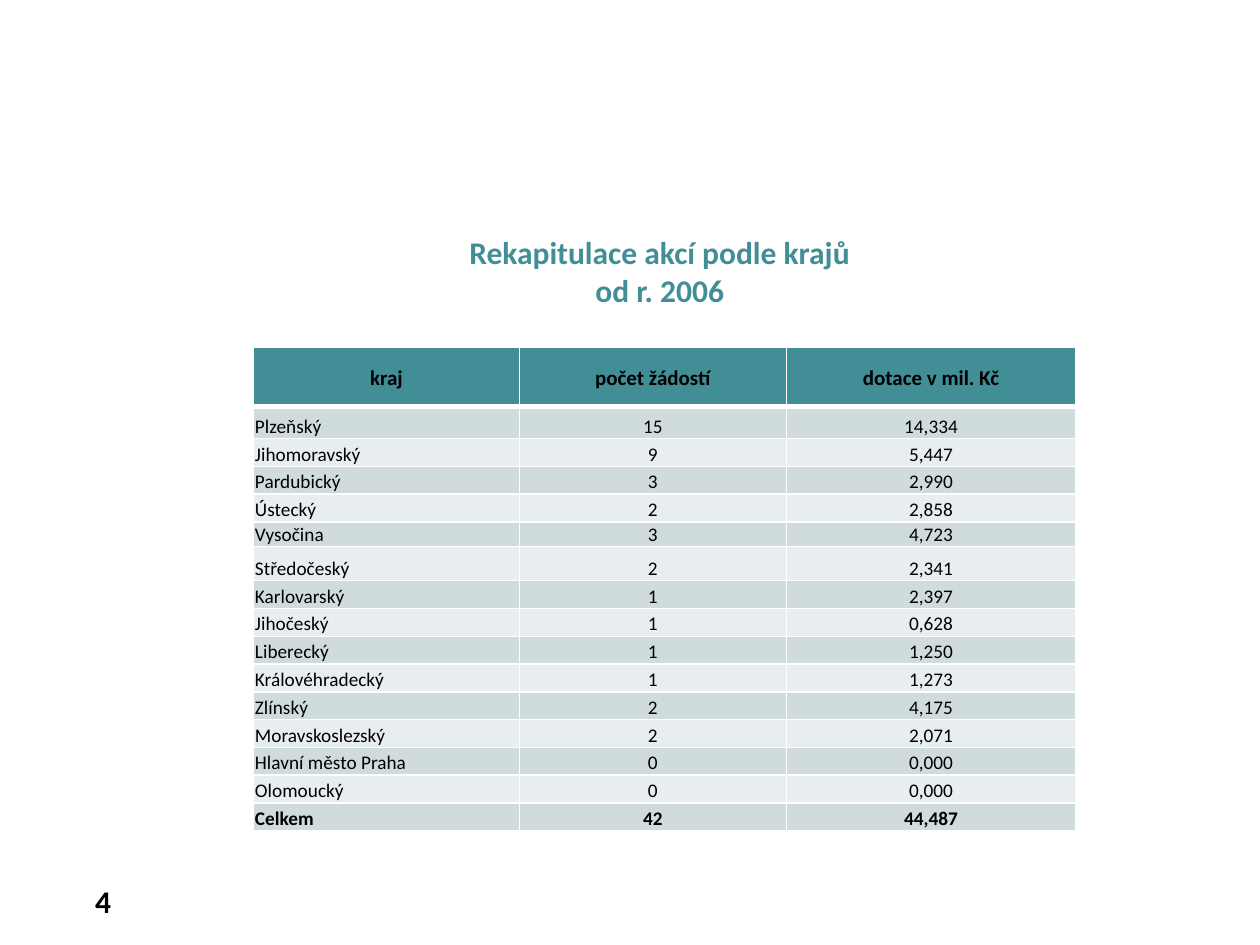
import pptx
import pptx.util
import pptx.dml.color
import pptx.enum.text
import pptx.oxml
import pptx.oxml.ns

Cm, Pt = pptx.util.Cm, pptx.util.Pt
ALIGN = pptx.enum.text.PP_ALIGN
ANCHOR = pptx.enum.text.MSO_ANCHOR
FIT = pptx.enum.text.MSO_AUTO_SIZE

COLORS = {"teal": "418E96", "dark": "CFDBDD", "light": "E8EEEF",
          "text": "000000", "line": "FFFFFF"}
TITLE = ["Rekapitulace akcí podle krajů", "od r. 2006"]
HEAD = ["kraj", "počet žádostí", "dotace v mil. Kč"]
REGIONS = [
    ["Plzeňský", "15", "14,334"],
    ["Jihomoravský", "9", "5,447"],
    ["Pardubický", "3", "2,990"],
    ["Ústecký", "2", "2,858"],
    ["Vysočina", "3", "4,723"],
    ["Středočeský", "2", "2,341"],
    ["Karlovarský", "1", "2,397"],
    ["Jihočeský", "1", "0,628"],
    ["Liberecký", "1", "1,250"],
    ["Královéhradecký", "1", "1,273"],
    ["Zlínský", "2", "4,175"],
    ["Moravskoslezský", "2", "2,071"],
    ["Hlavní město Praha", "0", "0,000"],
    ["Olomoucký", "0", "0,000"],
]
TOTAL = ["Celkem", "42", "44,487"]
WIDTHS = [5.36, 5.38, 5.84]
HEIGHT = 0.56
ODD = {0: 1.19, 1: 0.64, 5: 0.46, 6: 0.69}  # rows that differ from HEIGHT


def rgb(name):
    return pptx.dml.color.RGBColor.from_string(COLORS[name])


def assign(obj, **values):
    for key, value in values.items():
        setattr(obj, key, value)


class Deck:
    def __init__(self, face):
        self.face = face
        self.file = pptx.Presentation()
        assign(self.file, slide_width=Cm(25.4), slide_height=Cm(19.05))
        self.slide = self.file.slides.add_slide(self.file.slide_layouts[5])

    def label(self, frame, lines, size, color, bold, align):
        """Fill a text frame with one styled paragraph per line."""
        frame.text = "\n".join(lines)
        for para in frame.paragraphs:
            para.alignment = align
            for run in para.runs:
                assign(run.font, name=self.face, size=Pt(size), bold=bold)
                run.font.color.rgb = rgb(color)

    def title(self, lines, left, top, width, height):
        shape = self.slide.shapes.title
        assign(shape, left=Cm(left), top=Cm(top), width=Cm(width), height=Cm(height))
        assign(shape.text_frame, vertical_anchor=ANCHOR.BOTTOM,
               auto_size=FIT.NONE, word_wrap=True)
        self.label(shape.text_frame, lines, 18, "teal", True, ALIGN.CENTER)

    def number(self, text, left, top, width, height):
        box = self.slide.shapes.add_textbox(Cm(left), Cm(top), Cm(width), Cm(height))
        assign(box.text_frame, word_wrap=True, vertical_anchor=ANCHOR.MIDDLE)
        self.label(box.text_frame, [text], 18, "text", True, ALIGN.RIGHT)

    def border(self, cell, **widths):
        """Draw cell edges; keys are L, R, T and B, values are points."""
        props = cell._tc.get_or_add_tcPr()
        for side, width in widths.items():
            props.append(pptx.oxml.parse_xml(
                f'<a:ln{side} {pptx.oxml.ns.nsdecls("a")} w="{Pt(width)}">'
                f'<a:solidFill><a:srgbClr val="{COLORS["line"]}"/></a:solidFill>'
                f'</a:ln{side}>'))

    def table(self, rows, left, top):
        heights = [ODD.get(i, HEIGHT) for i in range(len(rows))]
        grid = self.slide.shapes.add_table(
            len(rows), len(WIDTHS), Cm(left), Cm(top),
            Cm(sum(WIDTHS)), Cm(sum(heights))).table
        assign(grid, first_row=False, horz_banding=False)
        for column, width in zip(grid.columns, WIDTHS):
            column.width = Cm(width)
        for i, row in enumerate(rows):
            grid.rows[i].height = Cm(heights[i])
            head = i == 0
            bold = head or i == len(rows) - 1
            fill = "teal" if head else "dark" if i % 2 else "light"
            for j, text in enumerate(row):
                cell = grid.cell(i, j)
                assign(cell, margin_left=Cm(0.03), margin_right=Cm(0.03),
                       margin_top=Cm(0.03), margin_bottom=0,
                       vertical_anchor=ANCHOR.MIDDLE if head else ANCHOR.BOTTOM)
                self.border(cell, L=1, R=1, T=3 if i == 1 else 1, B=3 if head else 1)
                cell.fill.solid()
                cell.fill.fore_color.rgb = rgb(fill)
                self.label(cell.text_frame, [text], 12 if head else 11, "text", bold,
                           ALIGN.CENTER if head or j else ALIGN.LEFT)


def main():
    deck = Deck("Calibri")
    deck.number("4", 0.69, 17.65, 1.8, 1.02)
    deck.table([HEAD, *REGIONS, TOTAL], 5.11, 7.01)
    deck.title(TITLE, 3.1, 4.57, 20.4, 1.78)
    deck.file.save("out.pptx")


if __name__ == "__main__":
    main()
